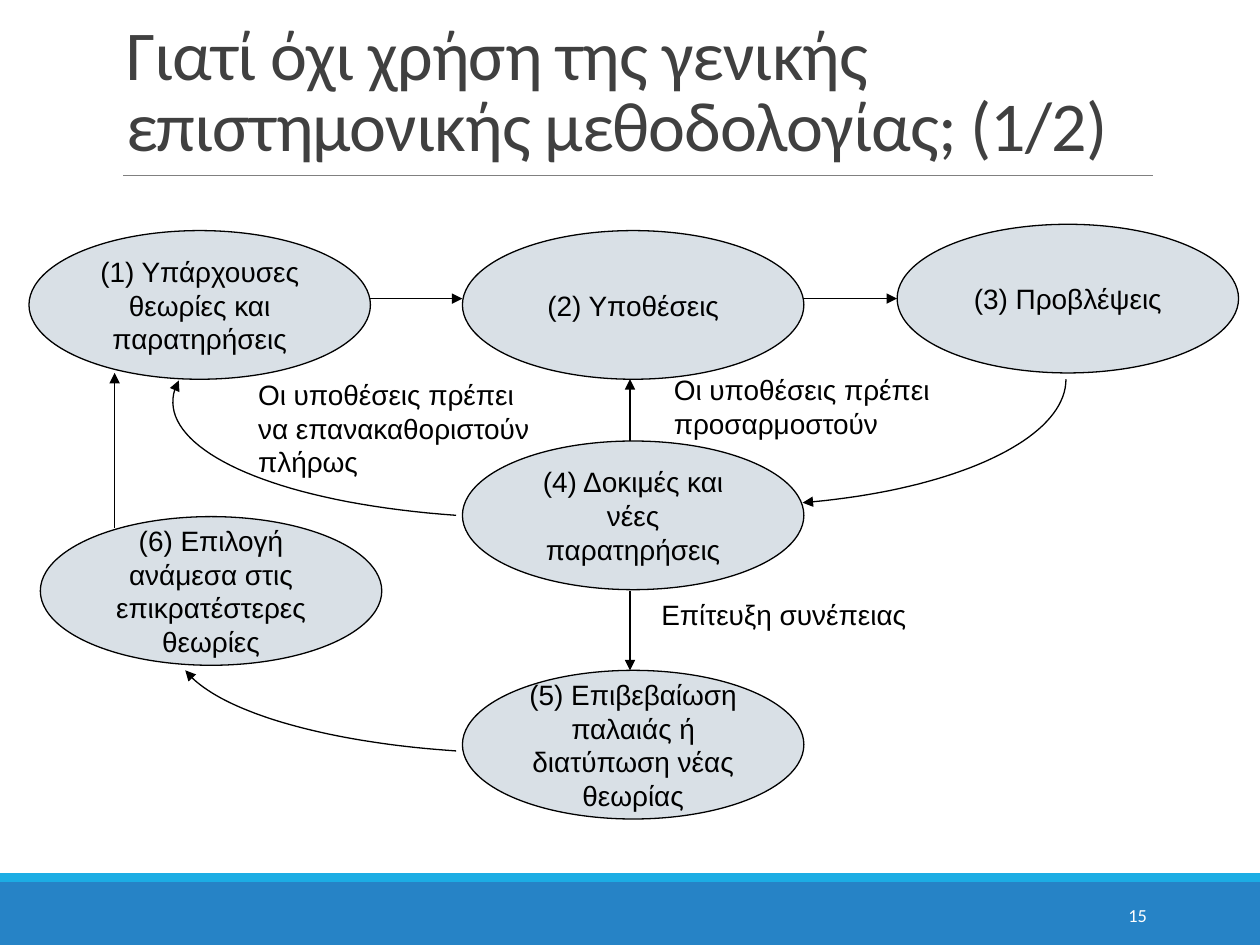
"""Builds a slide with the cycle of the general scientific method."""
import pptx
import pptx.dml.color
import pptx.enum.shapes
import pptx.enum.text
import pptx.oxml.ns
import pptx.util
from lxml import etree

PP = pptx.enum.text.PP_ALIGN
ANCHOR = pptx.enum.text.MSO_ANCHOR
SHAPE = pptx.enum.shapes.MSO_SHAPE
qn = pptx.oxml.ns.qn


def paint(fmt, color):
    if hasattr(fmt, "solid"):
        fmt.solid()
        fmt = fmt.fore_color
    fmt.rgb = pptx.dml.color.RGBColor.from_string(color)


def write(s, text, size, font, color, align, anchor):
    tf = s.text_frame
    tf.word_wrap = True
    tf.auto_size = pptx.enum.text.MSO_AUTO_SIZE.NONE
    tf.vertical_anchor = anchor
    tf.text = text
    p = tf.paragraphs[0]
    p.alignment = align
    r = p.runs[0]
    r.font.size = pptx.util.Pt(size)
    r.font.name = font
    paint(r.font.color, color)
    return p


prs = pptx.Presentation()
prs.slide_width = pptx.util.Inches(10)
prs.slide_height = pptx.util.Inches(7.5)
U = prs.slide_width // 100
slide = prs.slides.add_slide(prs.slide_layouts[5])
sp = slide.shapes

for top, height, color in [(70, 5, "2683C6"), (69.3, 0.7, "1CADE4")]:
    s = sp.add_shape(SHAPE.RECTANGLE, 0, int(top * U), 100 * U, int(height * U))
    s.shadow.inherit = False
    paint(s.fill, color)
    s.line.fill.background()

s = sp.title
s.left, s.top, s.width, s.height = 9 * U, int(1.1 * U), int(82.5 * U), int(12.6 * U)
p = write(s, "Γιατί όχι χρήση της γενικής επιστημονικής μεθοδολογίας; (1/2)",
          40, "Calibri", "404040", PP.LEFT, ANCHOR.BOTTOM)
p.line_spacing = 0.85
p.runs[0].font._element.set("spc", "-50")

s = sp.add_textbox(int(81.2 * U), int(70.6 * U), int(10.8 * U), 4 * U)
write(s, "15", 10.5, "Calibri", "FFFFFF", PP.RIGHT, ANCHOR.MIDDLE)

steps = [
    (2.3, 18.3, "(1) Υπάρχουσες θεωρίες και παρατηρήσεις"),
    (36.7, 18.3, "(2) Υποθέσεις"),
    (71.2, 17.8, "(3) Προβλέψεις"),
    (36.7, 35, "(4) Δοκιμές και νέες παρατηρήσεις"),
    (36.7, 53.2, "(5) Επιβεβαίωση παλαιάς ή διατύπωση νέας θεωρίας"),
    (3.2, 41, "(6) Επιλογή ανάμεσα στις επικρατέστερες θεωρίες"),
]
for left, top, text in steps:
    s = sp.add_shape(SHAPE.OVAL, int(left * U), int(top * U), int(27.1 * U), int(11.8 * U))
    s.shadow.inherit = False
    paint(s.fill, "D9E0E6")
    paint(s.line.fill, "000000")
    s.line.width = pptx.util.Pt(0.75)
    write(s, text, 16, "Arial", "000000", PP.CENTER, ANCHOR.MIDDLE)

lines = [
    (9.8, 13.9, 91.5, 13.9),
    (29.3, 23.7, 36.7, 23.7),
    (63.8, 23.7, 71.2, 23.7),
    (50, 35, 50, 30.1),
    (50, 46.9, 50, 53.2),
    (9.1, 41.9, 9.1, 29.6),
]
strokes = []
for ends in lines:
    s = sp.add_connector(pptx.enum.shapes.MSO_CONNECTOR.STRAIGHT, *[int(v * U) for v in ends])
    strokes.append(s)

curves = [
    [(84.6, 30.1), (84.6, 34.8), (75.9, 38.9), (63.7, 39.9)],
    [(36.2, 40.9), (20.5, 39.8), (11.5, 35), (14.2, 30.2)],
    [(36.2, 59.6), (25.6, 58.9), (17.2, 56.4), (14.7, 53.2)],
]
for ctrl in curves:
    points = []
    for i in range(41):
        t = i / 40
        weights = [(1 - t) ** 3, 3 * t * (1 - t) ** 2, 3 * t ** 2 * (1 - t), t ** 3]
        points.append([int(U * sum(w * c[axis] for w, c in zip(weights, ctrl))) for axis in (0, 1)])
    builder = sp.build_freeform(*points[0])
    builder.add_line_segments(points[1:], close=False)
    s = builder.convert_to_shape()
    s.fill.background()
    strokes.append(s)

for s in strokes:
    rule = s is strokes[0]
    paint(s.line.fill, "808080" if rule else "000000")
    s.line.width = pptx.util.Pt(0.5 if rule else 0.75)
    spPr = s._element.spPr
    if not rule:
        etree.SubElement(spPr.find(qn("a:ln")), qn("a:tailEnd"), type="triangle", w="med", len="med")
    etree.SubElement(spPr, qn("a:effectLst"))

labels = [
    (19.5, 29.5, 25.1, 9, "Οι υποθέσεις πρέπει να επανακαθοριστούν πλήρως"),
    (52.5, 29.1, 23.6, 6.4, "Οι υποθέσεις πρέπει προσαρμοστούν"),
    (51.5, 46.9, 23.6, 3.7, "Επίτευξη συνέπειας"),
]
for left, top, width, height, text in labels:
    s = sp.add_textbox(int(left * U), int(top * U), int(width * U), int(height * U))
    write(s, text, 16, "Arial", "000000", PP.LEFT, ANCHOR.TOP)

prs.save("out.pptx")
